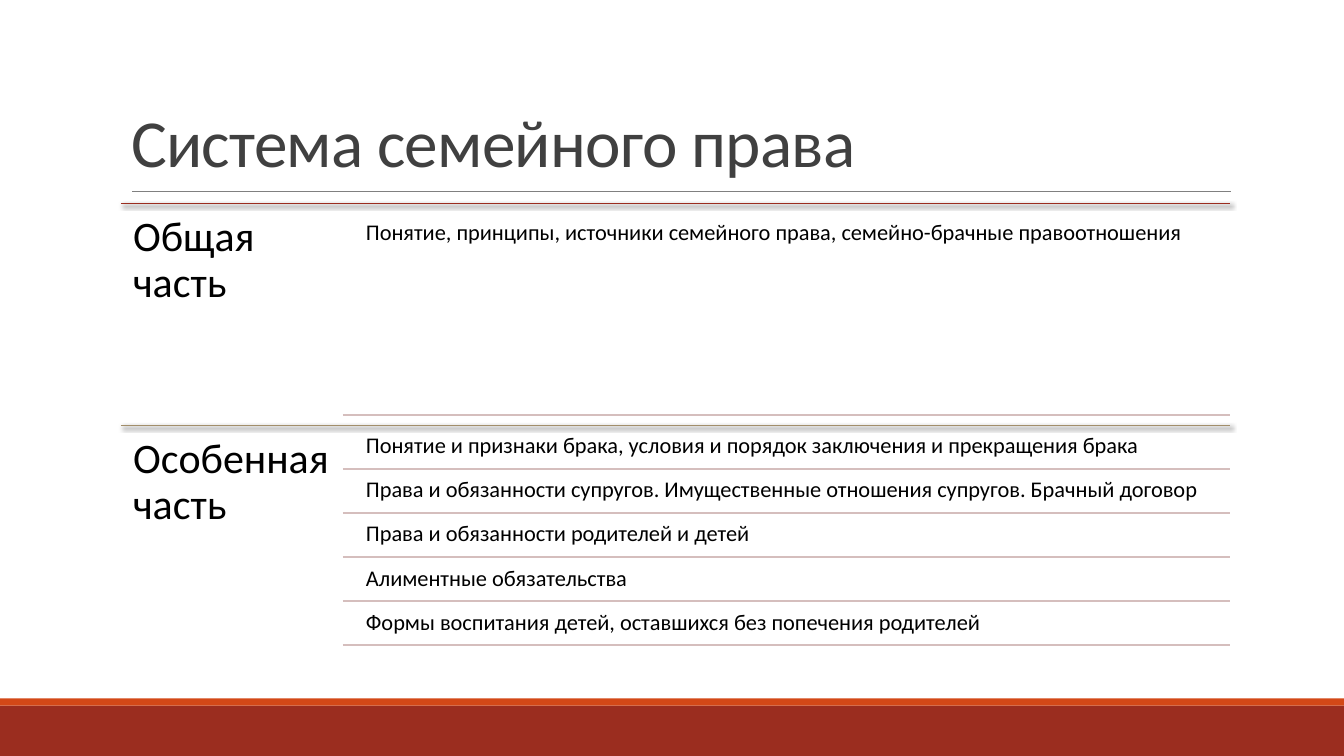
from lxml import etree
from pptx import Presentation
from pptx.dml.color import RGBColor
from pptx.enum import shapes, text
from pptx.oxml import ns, parse_xml
from pptx.util import Inches, Pt

LEFT, RIGHT = 1.2, 12.2
TOPIC_LEFT, TOPIC_WIDTH = 3.56, 8.63
TOPIC_RULE_LEFT = 3.4
GENERAL_TOPIC = "Понятие, принципы, источники семейного права, семейно-брачные правоотношения"
SPECIAL_TOPICS = [
    "Понятие и признаки брака, условия и порядок заключения и прекращения брака",
    "Права и обязанности супругов. Имущественные отношения супругов. Брачный договор",
    "Права и обязанности родителей и детей",
    "Алиментные обязательства",
    "Формы воспитания детей, оставшихся без попечения родителей",
]
SHADOW = (
    f'<a:effectLst {ns.nsdecls("a")}>'
    '<a:outerShdw blurRad="38100" dist="25400" dir="2700000" algn="br" rotWithShape="0">'
    '<a:srgbClr val="000000"><a:alpha val="60000"/></a:srgbClr>'
    '</a:outerShdw></a:effectLst>'
)


def color(hex_value):
    return RGBColor.from_string(hex_value)


def write(frame, content, size, hex_color="000000", line_spacing=0.9, inset=0.1,
          anchor=text.MSO_ANCHOR.TOP, tracking=None):
    """Fill a text frame with one formatted paragraph; tracking is in points."""
    frame.word_wrap = True
    frame.auto_size = text.MSO_AUTO_SIZE.NONE
    frame.vertical_anchor = anchor
    frame.margin_left = frame.margin_right = Inches(inset)
    frame.margin_top = frame.margin_bottom = Inches(inset)
    paragraph = frame.paragraphs[0]
    paragraph.alignment = text.PP_ALIGN.LEFT
    paragraph.line_spacing = line_spacing
    run = paragraph.add_run()
    run.text = content
    run.font.name = "Calibri"
    run.font.size = Pt(size)
    run.font.color.rgb = color(hex_color)
    if tracking is not None:
        run.font._element.set("spc", str(int(tracking * 100)))


def add_label(slide, content, left, top, width, height, **style):
    box = slide.shapes.add_textbox(Inches(left), Inches(top), Inches(width), Inches(height))
    write(box.text_frame, content, **style)


def add_rule(slide, left, right, y, hex_color, weight, shadow=False):
    rule = slide.shapes.add_connector(
        shapes.MSO_CONNECTOR.STRAIGHT, Inches(left), Inches(y), Inches(right), Inches(y))
    rule.line.color.rgb = color(hex_color)
    rule.line.width = Pt(weight)
    properties = rule._element.spPr
    if shadow:
        properties.append(parse_xml(SHADOW))
    else:
        etree.SubElement(properties, ns.qn("a:effectLst"))


def add_band(slide, top, height, hex_color):
    band = slide.shapes.add_shape(
        shapes.MSO_SHAPE.RECTANGLE, 0, Inches(top), Inches(13.33), Inches(height))
    band.shadow.inherit = False
    band.fill.solid()
    band.fill.fore_color.rgb = color(hex_color)
    band.line.fill.background()


def add_title(slide, content):
    title = slide.shapes.title
    title.left, title.top = Inches(LEFT), Inches(0.31)
    title.width, title.height = Inches(11), Inches(1.59)
    write(title.text_frame, content, size=48, hex_color="404040", line_spacing=0.85,
          anchor=text.MSO_ANCHOR.BOTTOM, tracking=-0.5)


def add_part(slide, name, top, rule_color):
    add_rule(slide, LEFT, RIGHT, top, rule_color, 1, shadow=True)
    add_label(slide, name, LEFT, top, 2.2, 2.2, size=30, inset=0.12)


def add_topic(slide, content, top, height, rule_y):
    add_label(slide, content, TOPIC_LEFT, top, TOPIC_WIDTH, height, size=16, inset=0.07)
    add_rule(slide, TOPIC_RULE_LEFT, RIGHT, rule_y, "D5BEBD", 1.25)


def main():
    deck = Presentation()
    deck.slide_width, deck.slide_height = Inches(13.33), Inches(7.5)
    slide = deck.slides.add_slide(deck.slide_layouts[5])

    add_band(slide, 7, 0.5, "9B2D1F")
    add_band(slide, 6.93, 0.07, "D34817")
    add_rule(slide, 1.31, 12.21, 1.9, "808080", 0.5)
    add_title(slide, "Система семейного права")

    add_part(slide, "Общая часть", 2.02, "9B2D1F")
    add_topic(slide, GENERAL_TOPIC, 2.12, 2, 4.12)

    add_part(slide, "Особенная часть", 4.22, "A28E6A")
    first_rule, last_rule = 4.65, 6.4
    pitch = (last_rule - first_rule) / (len(SPECIAL_TOPICS) - 1)
    for index, topic in enumerate(SPECIAL_TOPICS):
        rule_y = first_rule + index * pitch
        add_topic(slide, topic, rule_y - 0.41, 0.41, rule_y)

    deck.save("out.pptx")


if __name__ == "__main__":
    main()
